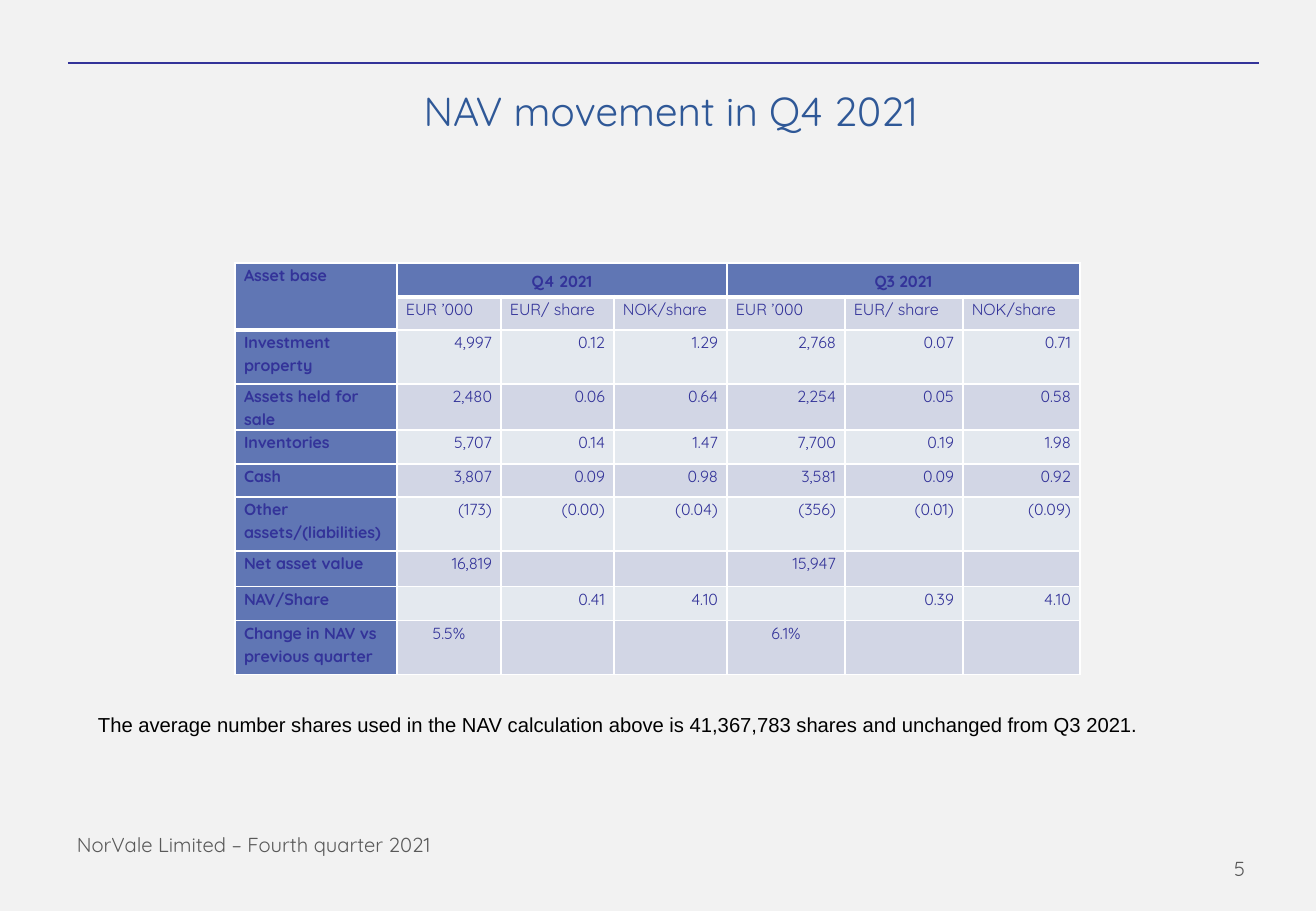
"""Build the slide on net asset value movement in Q4 2021."""
from lxml.etree import SubElement
from pptx import Presentation
from pptx.dml.color import RGBColor
from pptx.enum.shapes import MSO_CONNECTOR
from pptx.enum.text import MSO_ANCHOR, PP_ALIGN
from pptx.oxml.ns import qn
from pptx.util import Emu, Pt

TITLE = "NAV movement in Q4 2021"
SHARE_NOTE = ("The average number shares used in the NAV calculation above is "
              "41,367,783 shares and unchanged from Q3 2021.")
FOOTER = "NorVale Limited – Fourth quarter 2021"
PAGE = "5"
MEASURES = ["EUR ’000", "EUR/ share", "NOK/share"]
ASSET_ROWS = [
    ["Asset base", "Q4 2021", "", "", "Q3 2021", "", ""],
    ["", *MEASURES, *MEASURES],
    ["Investment property", "4,997", "0.12", "1.29", "2,768", "0.07", "0.71"],
    ["Assets held for sale", "2,480", "0.06", "0.64", "2,254", "0.05", "0.58"],
    ["Inventories", "5,707", "0.14", "1.47", "7,700", "0.19", "1.98"],
    ["Cash", "3,807", "0.09", "0.98", "3,581", "0.09", "0.92"],
    ["Other assets/(liabilities)", "(173)", "(0.00)", "(0.04)", "(356)", "(0.01)", "(0.09)"],
    ["Net asset value", "16,819", "", "", "15,947", "", ""],
    ["NAV/Share", "", "0.41", "4.10", "", "0.39", "4.10"],
    ["Change in NAV vs previous quarter", "5.5%", "", "", "6.1%", "", ""],
]
COLUMN_WIDTHS = [162, 104, 113, 113, 118, 118, 117]
ROW_HEIGHTS = [34, 33, 54, 44, 34, 33, 54, 36, 34, 54]
MERGES = [((0, 0), (1, 0)), ((0, 1), (0, 3)), ((0, 4), (0, 6))]
COLORS = {"background": "F2F2F2", "title": "2F5897", "navy": "333399", "grey": "595959",
          "black": "000000", "header": "6076B4", "dark band": "D2D6E5",
          "light band": "E4E9EF", "border": "FFFFFF"}
BRAND_FONT = "Quicksand"
EMU_PER_PX = 914400 / 121.5


def px(length):
    return Emu(round(length * EMU_PER_PX))


def color(name):
    return RGBColor.from_string(COLORS[name])


def format_text(paragraph, size, color_name, font=BRAND_FONT, bold=False):
    for run in paragraph.runs:
        run.font.size = Pt(size)
        run.font.name = font
        run.font.bold = bold
        run.font.color.rgb = color(color_name)


def add_label(slide, text, box, size, color_name, font=BRAND_FONT):
    frame = slide.shapes.add_textbox(*map(px, box)).text_frame
    frame.word_wrap = True
    frame.text = text
    format_text(frame.paragraphs[0], size, color_name, font)
    return frame


def set_borders(cell, top, bottom):
    properties = cell._tc.get_or_add_tcPr()
    for side, width in (("L", 1), ("R", 1), ("T", top), ("B", bottom)):
        border = SubElement(properties, qn(f"a:ln{side}"), w=str(Pt(width)))
        fill = SubElement(border, qn("a:solidFill"))
        SubElement(fill, qn("a:srgbClr"), val=COLORS["border"])


def cell_alignment(row, column):
    if row == 0 and column:
        return PP_ALIGN.CENTER
    if row <= 1 or column == 0:
        return PP_ALIGN.LEFT
    return PP_ALIGN.CENTER if row == len(ASSET_ROWS) - 1 else PP_ALIGN.RIGHT


def format_cell(cell, row, column, text):
    heading = row == 0 or column == 0
    above_rule = row == 0 or (row, column) == (1, 0)
    below_rule = (row == 1 and column > 0) or (row, column) == (2, 0)
    set_borders(cell, 3 if below_rule else 1, 3 if above_rule else 1)
    cell.fill.solid()
    band = "dark band" if row % 2 else "light band"
    cell.fill.fore_color.rgb = color("header" if heading else band)
    cell.margin_left = cell.margin_right = px(9)
    cell.margin_top = cell.margin_bottom = 0
    cell.vertical_anchor = MSO_ANCHOR.MIDDLE if row == 0 and column else MSO_ANCHOR.TOP
    paragraph = cell.text_frame.paragraphs[0]
    paragraph.text = text
    paragraph.alignment = cell_alignment(row, column)
    paragraph.line_spacing = 1.15
    format_text(paragraph, 9.5, "navy", bold=heading)
    if not text:
        SubElement(paragraph._p, qn("a:endParaRPr"), sz="950")


def add_nav_table(slide):
    table = slide.shapes.add_table(
        len(ROW_HEIGHTS), len(COLUMN_WIDTHS), px(235), px(263),
        px(sum(COLUMN_WIDTHS)), px(sum(ROW_HEIGHTS))).table
    for column, width in zip(table.columns, COLUMN_WIDTHS):
        column.width = px(width)
    for row, height in zip(table.rows, ROW_HEIGHTS):
        row.height = px(height)
    for row, values in enumerate(ASSET_ROWS):
        for column, text in enumerate(values):
            format_cell(table.cell(row, column), row, column, text)
    for first, last in MERGES:
        table.cell(*first).merge(table.cell(*last))


def main():
    presentation = Presentation()
    presentation.slide_width, presentation.slide_height = px(1316), px(911)
    slide = presentation.slides.add_slide(presentation.slide_layouts[5])
    slide.background.fill.solid()
    slide.background.fill.fore_color.rgb = color("background")

    title = slide.shapes.title
    title.left, title.top, title.width, title.height = map(px, (78, 34, 1185, 152))
    title.text_frame.text = TITLE
    title.text_frame.vertical_anchor = MSO_ANCHOR.MIDDLE
    title.text_frame.paragraphs[0].alignment = PP_ALIGN.CENTER
    format_text(title.text_frame.paragraphs[0], 24, "title")

    rule = slide.shapes.add_connector(
        MSO_CONNECTOR.STRAIGHT, px(68), px(63), px(1259), px(63))
    rule.line.color.rgb = color("navy")
    rule.line.width = Pt(1.75)
    SubElement(rule._element.spPr, qn("a:effectLst"))

    add_nav_table(slide)
    note = add_label(slide, SHARE_NOTE, (86, 703, 1194, 40), 12, "black", "Arial")
    note.paragraphs[0].alignment = PP_ALIGN.JUSTIFY
    note.paragraphs[0].line_spacing = 1.15
    note.paragraphs[0].space_after = Pt(6)
    add_label(slide, FOOTER, (65, 826, 429, 49), 12, "grey")
    page = add_label(slide, PAGE, (1230, 844, 81, 49), 12, "grey")
    page.vertical_anchor = MSO_ANCHOR.MIDDLE
    page.margin_left = px(4)
    page.margin_right = px(6)

    presentation.save("out.pptx")


if __name__ == "__main__":
    main()
